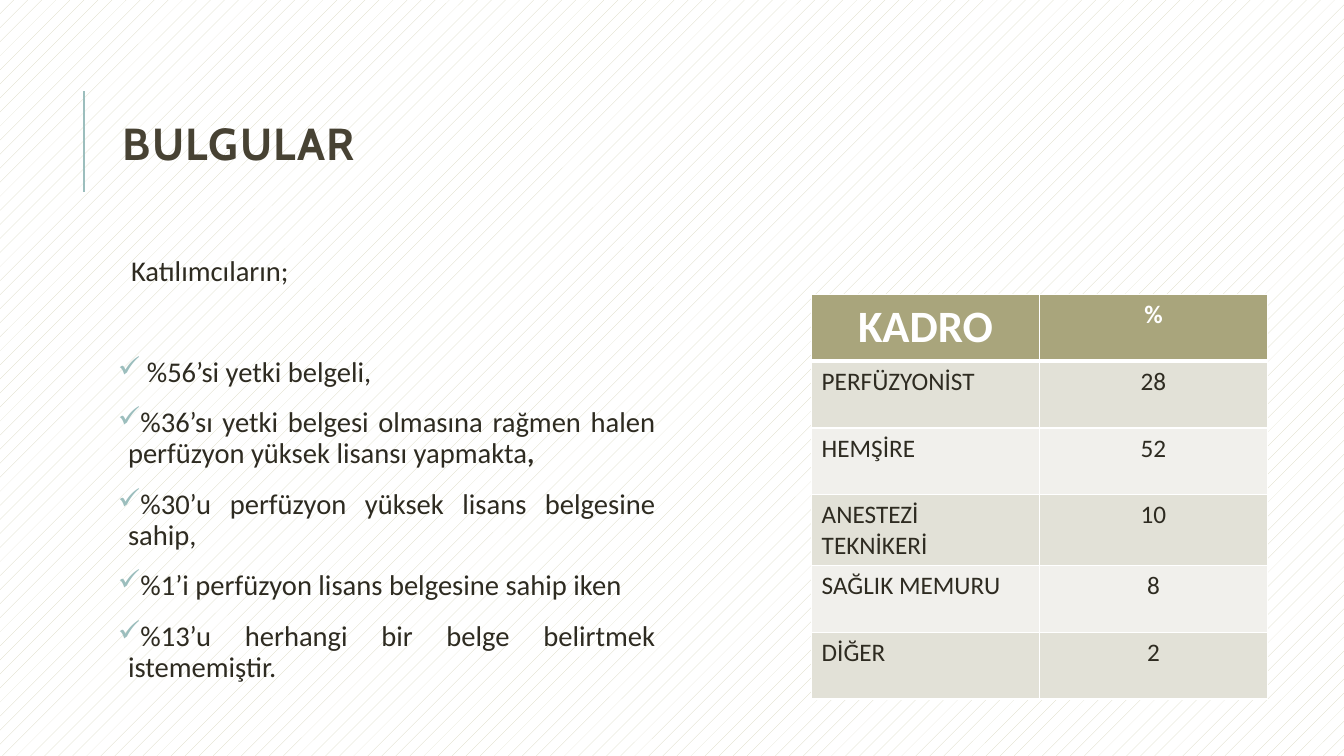
from lxml import etree
from pptx import Presentation
from pptx.dml.color import RGBColor
from pptx.enum import dml, shapes, text
from pptx.oxml import ns
from pptx.util import Inches, Pt

COLORS = {
    "dots": "D8D6BE", "white": "FFFFFF", "accent": "9CBEBD", "title": "474233",
    "text": "2E2B21", "header": "A9A57C", "odd": "E2E1D7", "even": "F1F0EC",
}


def color(name):
    return RGBColor.from_string(COLORS[name])


def add_run(paragraph, words, size, color_name, bold=False, font="Calibri"):
    run = paragraph.add_run()
    run.text = words
    run.font.name = font
    run.font.size = Pt(size)
    run.font.bold = bold
    run.font.color.rgb = color(color_name)
    return run


presentation = Presentation()
presentation.slide_width = Inches(13.33)
presentation.slide_height = Inches(7.5)
slide = presentation.slides.add_slide(presentation.slide_layouts[6])

# Background
background = slide.background.fill
background.patterned()
background.pattern = dml.MSO_PATTERN.PERCENT_5
background.fore_color.rgb = color("dots")
background.back_color.rgb = color("white")

# Title with accent line
line = slide.shapes.add_connector(
    shapes.MSO_CONNECTOR.STRAIGHT, Inches(0.83), Inches(1.9), Inches(0.83), Inches(0.9))
line.line.color.rgb = color("accent")
line.line.width = Pt(1.5)
etree.SubElement(line._element.spPr, ns.qn("a:effectLst"))

title = slide.shapes.add_textbox(Inches(1.12), Inches(0.64), Inches(10.63), Inches(1.64))
title.text_frame.word_wrap = True
title.text_frame.vertical_anchor = text.MSO_ANCHOR.MIDDLE
paragraph = title.text_frame.paragraphs[0]
paragraph.line_spacing = 0.8
run = add_run(paragraph, "BULGULAR", 32, "title", True, "Cabin")
run.font._element.set("spc", "100")

# Findings: an intro line, then check-marked points
findings = [
    [("Katılımcıların;", False)],
    [(" %56’si yetki belgeli, ", False)],
    [("%36’sı yetki belgesi olmasına rağmen halen perfüzyon yüksek lisansı yapmakta", False),
     (", ", True)],
    [("%30’u perfüzyon yüksek lisans belgesine sahip, ", False)],
    [("%1’i perfüzyon lisans belgesine sahip iken ", False)],
    [("%13’u herhangi bir belge belirtmek istememiştir. ", False)],
]
body = slide.shapes.add_textbox(Inches(1.12), Inches(2.5), Inches(5.43), Inches(4.4))
frame = body.text_frame
frame.word_wrap = True
frame.margin_left = frame.margin_right = Inches(0.05)
frame.margin_top = frame.margin_bottom = Inches(0.05)
for index, runs in enumerate(findings):
    paragraph = frame.paragraphs[0] if index == 0 else frame.add_paragraph()
    paragraph.alignment = text.PP_ALIGN.JUSTIFY
    paragraph.line_spacing = 0.9
    paragraph.space_before = Pt(48 if index == 1 else 12)
    paragraph.space_after = Pt(2)
    properties = paragraph._p.get_or_add_pPr()
    if index == 0:
        properties.set("marL", str(Inches(0.13)))
    else:
        properties.set("marL", str(Inches(0.1)))
        properties.set("indent", str(Inches(-0.1)))
        bullet_color = etree.SubElement(properties, ns.qn("a:buClr"))
        etree.SubElement(bullet_color, ns.qn("a:srgbClr"), val=COLORS["accent"])
        etree.SubElement(properties, ns.qn("a:buChar"), char="✓")
    for words, bold in runs:
        add_run(paragraph, words, 20.4, "text", bold)

# Staff table
staff = [
    ("KADRO", "%"),
    ("PERFÜZYONİST", "28"),
    ("HEMŞİRE", "52"),
    ("ANESTEZİ TEKNİKERİ", "10"),
    ("SAĞLIK MEMURU", "8"),
    ("DİĞER", "2"),
]
table = slide.shapes.add_table(
    len(staff), 2, Inches(8.05), Inches(2.92), Inches(4.52), Inches(3.98)).table
for row, values in enumerate(staff):
    fill_name = "header" if row == 0 else "odd" if row % 2 else "even"
    for column, value in enumerate(values):
        cell = table.cell(row, column)
        paragraph = cell.text_frame.paragraphs[0]
        if row == 0 or column == 1:
            paragraph.alignment = text.PP_ALIGN.CENTER
        add_run(paragraph, value, 32 if value == "KADRO" else 18,
                "white" if row == 0 else "text", row == 0)

        # Borders come before the fill in the cell properties
        properties = cell._tc.get_or_add_tcPr()
        for side in ("L", "R", "T", "B"):
            thick = (row, side) in ((0, "B"), (1, "T"))
            border = etree.SubElement(
                properties, ns.qn("a:ln" + side), w=str(Pt(3 if thick else 1)))
            border_fill = etree.SubElement(border, ns.qn("a:solidFill"))
            etree.SubElement(border_fill, ns.qn("a:srgbClr"), val=COLORS["white"])
        cell.fill.solid()
        cell.fill.fore_color.rgb = color(fill_name)

presentation.save("out.pptx")
